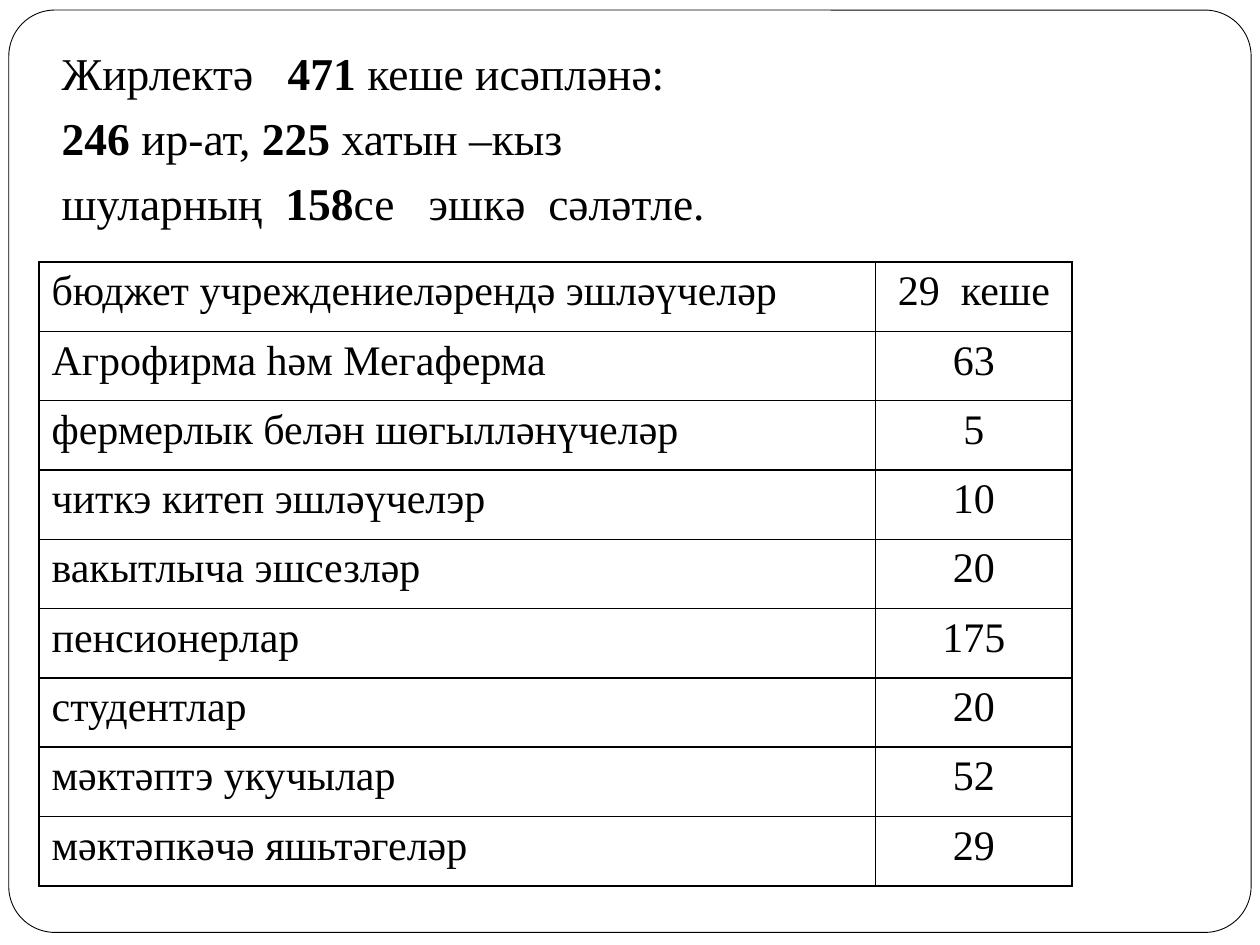
from dataclasses import dataclass

from lxml.etree import SubElement
from pptx import Presentation
from pptx.dml.color import RGBColor as Rgb
from pptx.enum.shapes import MSO_SHAPE as Shape
from pptx.enum.text import PP_ALIGN as Align
from pptx.oxml.ns import qn
from pptx.util import Inches, Pt

SUMMARY = [
    [("Жирлектә   ", False), ("471 ", True), ("кеше исәпләнә:", False)],
    [("246 ", True), ("ир-ат, ", False), ("225 ", True), ("хатын –кыз", False)],
    [("шуларның  ", False), ("158", True), ("се   эшкә  сәләтле.", False)],
]
GROUPS = [
    ("бюджет учреждениеләрендә эшләүчеләр", "29  кеше"),
    ("Агрофирма һәм Мегаферма", "63"),
    ("фермерлык белән шөгылләнүчеләр", "5"),
    ("читкэ китеп эшләүчелэр", "10"),
    ("вакытлыча эшсезләр", "20"),
    ("пенсионерлар", "175"),
    ("студентлар", "20"),
    ("мәктәптэ укучылар", "52"),
    ("мәктәпкәчә яшьтәгеләр", "29"),
]
COLUMN_WIDTHS = (6.64, 1.56)
COLUMN_ALIGNS = (Align.LEFT, Align.CENTER)
ROW_HEIGHT = 0.55


@dataclass(frozen=True)
class Theme:
    font: str = "Times New Roman"
    ink: str = "000000"
    paper: str = "FFFFFF"
    summary_size: float = 26
    table_size: float = 24
    summary_gap: float = 5.8
    frame_line: float = 0.5
    border: float = 1


THEME = Theme()


def box(left, top, width, height):
    return [Inches(length) for length in (left, top, width, height)]


def add_run(paragraph, words, size, bold=False):
    run = paragraph.add_run()
    run.text = words
    run.font.name = THEME.font
    run.font.size = Pt(size)
    run.font.bold = bold
    run.font.color.rgb = Rgb.from_string(THEME.ink)


def add_frame(slide):
    frame = slide.shapes.add_shape(Shape.ROUNDED_RECTANGLE, *box(0.07, 0.08, 9.86, 7.32))
    frame.adjustments[0] = 0.05
    frame.shadow.inherit = False
    frame.fill.solid()
    frame.fill.fore_color.rgb = Rgb.from_string(THEME.paper)
    frame.line.color.rgb = Rgb.from_string(THEME.ink)
    frame.line.width = Pt(THEME.frame_line)


def add_summary(slide):
    summary = slide.shapes.add_textbox(*box(0.39, 0.31, 8.5, 1.72)).text_frame
    summary.word_wrap = True
    for index, parts in enumerate(SUMMARY):
        line = summary.add_paragraph() if index else summary.paragraphs[0]
        line.space_before = Pt(THEME.summary_gap)
        for words, bold in parts:
            add_run(line, words, THEME.summary_size, bold)


def set_borders(cell):
    properties = cell._tc.get_or_add_tcPr()
    for position, side in enumerate(("lnL", "lnR", "lnT", "lnB")):
        edge = properties.makeelement(qn(f"a:{side}"), {"w": str(Pt(THEME.border))})
        properties.insert(position, edge)
        SubElement(SubElement(edge, qn("a:solidFill")), qn("a:srgbClr"), val=THEME.ink)


def add_groups(slide):
    place = box(0.31, 2.08, sum(COLUMN_WIDTHS), ROW_HEIGHT * len(GROUPS))
    groups = slide.shapes.add_table(len(GROUPS), len(COLUMN_WIDTHS), *place).table
    groups.first_row = groups.horz_banding = False
    for column, width in zip(groups.columns, COLUMN_WIDTHS):
        column.width = Inches(width)
    for row, entry in zip(groups.rows, GROUPS):
        row.height = Inches(ROW_HEIGHT)
        for cell, words, align in zip(row.cells, entry, COLUMN_ALIGNS):
            cell.fill.solid()
            cell.fill.fore_color.rgb = Rgb.from_string(THEME.paper)
            set_borders(cell)
            paragraph = cell.text_frame.paragraphs[0]
            paragraph.alignment = align
            add_run(paragraph, words, THEME.table_size)


def main():
    """Build the slide on the population of the settlement."""
    deck = Presentation()
    deck.slide_width, deck.slide_height = Inches(10), Inches(7.5)
    slide = deck.slides.add_slide(deck.slide_layouts[6])
    add_frame(slide)
    add_summary(slide)
    add_groups(slide)
    deck.save("out.pptx")


if __name__ == "__main__":
    main()
